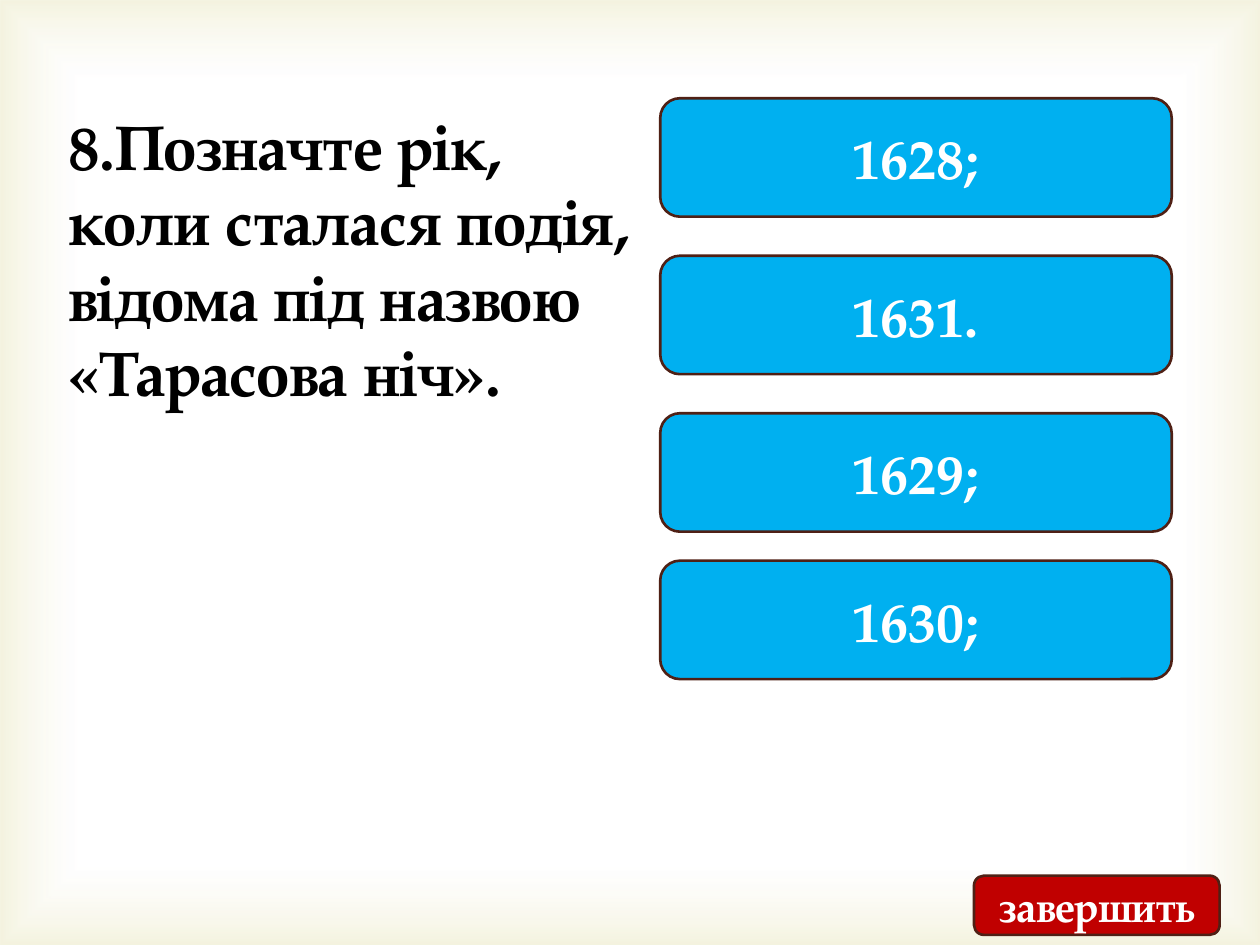
import pptx
import pptx.dml.color
import pptx.enum.shapes
import pptx.enum.text
import pptx.oxml
import pptx.oxml.ns
import pptx.util

Inches = pptx.util.Inches
Pt = pptx.util.Pt
Shape = pptx.enum.shapes.MSO_SHAPE
Align = pptx.enum.text.PP_ALIGN
Anchor = pptx.enum.text.MSO_ANCHOR

FONT = "TeX Gyre Pagella"
COLORS = {
    "text": "000000",
    "light": "FFFFFF",
    "answer": "00B0F0",
    "finish": "C00000",
    "outline": "4F2015",
    "glow": "D1CA75",
}
ANSWERS = {"1628;": 0.78, "1631.": 2.03, "1629;": 3.28, "1630;": 4.45}


def color(name):
    return pptx.dml.color.RGBColor.from_string(COLORS[name])


def place(shape, left, top, width, height):
    position = {"left": left, "top": top, "width": width, "height": height}
    for name, value in position.items():
        setattr(shape, name, Inches(value))


def write(shape, text, size, color_name, align, anchor):
    frame = shape.text_frame
    frame.word_wrap = True
    frame.vertical_anchor = anchor
    para = frame.paragraphs[0]
    para.alignment = align
    span = para.add_run()
    span.text = text
    for name, value in {"name": FONT, "size": Pt(size), "bold": True}.items():
        setattr(span.font, name, value)
    span.font.color.rgb = color(color_name)


def add_glow(page, deck):
    """Tint the slide's edges with a faint gradient, behind everything else."""
    glow = page.shapes.add_shape(
        Shape.RECTANGLE, 0, 0, deck.slide_width, deck.slide_height)
    glow.shadow.inherit = False
    glow.line.fill.background()
    glow.fill.gradient()
    stops = "".join(
        f'<a:gs pos="{position * 1000}"><a:srgbClr val="{COLORS[name]}">'
        f'<a:alpha val="{alpha * 1000}"/></a:srgbClr></a:gs>'
        for position, name, alpha in ((83, "light", 11), (100, "glow", 23)))
    gradient = pptx.oxml.parse_xml(
        f'<a:gradFill {pptx.oxml.ns.nsdecls("a")} rotWithShape="1">'
        f'<a:gsLst>{stops}</a:gsLst><a:path path="rect">'
        '<a:fillToRect l="50000" t="50000" r="50000" b="50000"/>'
        '</a:path></a:gradFill>')
    properties = glow.element.spPr
    properties.replace(properties.find(pptx.oxml.ns.qn("a:gradFill")), gradient)
    page.shapes.element.insert(2, glow.element)


def add_question(page, text):
    title = page.shapes.title
    place(title, 0.44, 0.8, 4.69, 2.52)
    write(title, text, 36, "text", Align.LEFT, Anchor.TOP)
    title.text_frame.auto_size = pptx.enum.text.MSO_AUTO_SIZE.SHAPE_TO_FIT_TEXT


def add_button(page, text, position, fill, size):
    button = page.shapes.add_shape(Shape.ROUNDED_RECTANGLE, *map(Inches, position))
    button.shadow.inherit = False
    button.fill.solid()
    button.fill.fore_color.rgb = color(fill)
    button.line.color.rgb = color("outline")
    button.line.width = Pt(1.5)
    write(button, text, size, "light", Align.CENTER, Anchor.MIDDLE)


def main():
    deck = pptx.Presentation()
    deck.slide_width, deck.slide_height = Inches(10), Inches(7.5)
    page = deck.slides.add_slide(deck.slide_layouts[5])
    add_glow(page, deck)
    add_question(page, "8.Позначте рік, коли сталася подія, "
                       "відома під назвою «Тарасова ніч».")
    for answer, top in ANSWERS.items():
        add_button(page, answer, (5.24, top, 4.06, 0.94), "answer", 32)
    add_button(page, "завершить", (7.73, 6.95, 1.95, 0.47), "finish", 24)
    deck.save("out.pptx")


if __name__ == "__main__":
    main()
